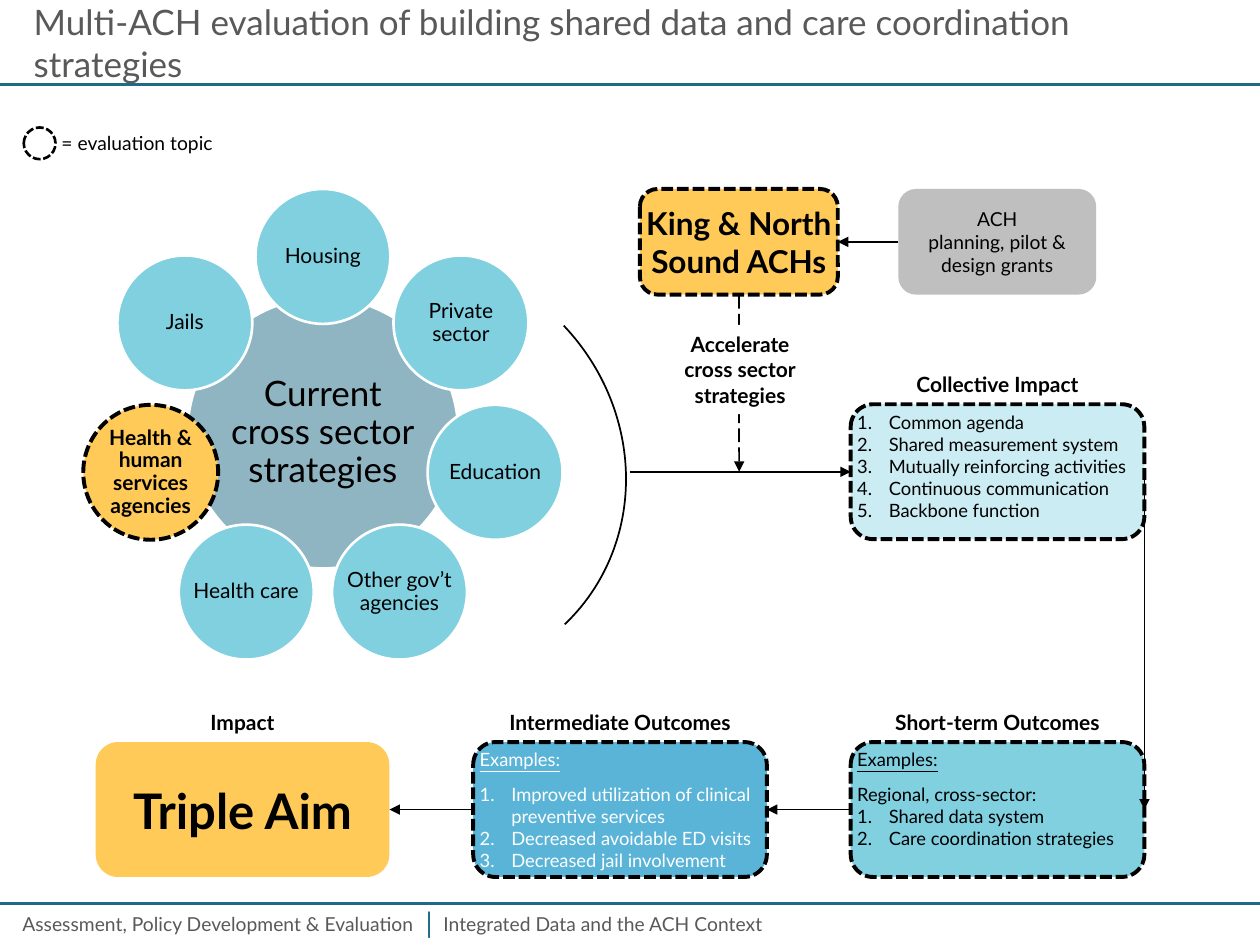
import math

import lxml.etree
import pptx
import pptx.dml.color
import pptx.enum.dml
import pptx.enum.shapes
import pptx.enum.text
import pptx.oxml.ns
import pptx.util

Cm, Pt = pptx.util.Cm, pptx.util.Pt
qn = pptx.oxml.ns.qn
SHAPE = pptx.enum.shapes.MSO_SHAPE
CONNECTOR = pptx.enum.shapes.MSO_CONNECTOR
DASH = pptx.enum.dml.MSO_LINE
ALIGN = pptx.enum.text.PP_ALIGN
ANCHOR = pptx.enum.text.MSO_ANCHOR

COLORS = {
    "black": "000000", "white": "FFFFFF", "grey text": "595959",
    "teal": "206A87", "aqua": "80D0E0", "pale aqua": "CCECF3",
    "blue": "59B4D8", "amber": "FFCA58", "grey": "BFBFBF",
}
TOP, LEFT, BOTTOM, RIGHT = range(4)
BOX_W, BOX_H = 5.92, 2.72
IMPACT_X, INTERMEDIATE_X, SHORT_TERM_X = (1.93 + 7.61 * i for i in range(3))
IMPACT_ROW, OUTCOME_ROW = 8.15, 14.96
FLOW_Y = IMPACT_ROW + BOX_H / 2


def rgb(name):
    return pptx.dml.color.RGBColor.from_string(COLORS[name])


def write(shape, lines, size, color="black", bold=False, align=ALIGN.CENTER,
          anchor=ANCHOR.MIDDLE, inset=0, spacing=None, wrap=True):
    frame = shape.text_frame
    frame.text = "\n".join(lines)
    frame.word_wrap = wrap
    frame.vertical_anchor = anchor
    frame.margin_left = frame.margin_right = Cm(inset)
    frame.margin_top = frame.margin_bottom = Cm(inset / 2)
    for paragraph in frame.paragraphs:
        paragraph.alignment = align
        if spacing:
            paragraph.line_spacing = spacing
        for run in paragraph.runs:
            run.font.name = "Lato"
            run.font.size = Pt(size)
            run.font.bold = bold
            run.font.color.rgb = rgb(color)


def add_label(slide, box, text, size, **style):
    label = slide.shapes.add_textbox(*map(Cm, box))
    write(label, [text], size, inset=0.25, **style)


def add_block(slide, kind, box, fill=None, line=None, width=1, dash=None):
    block = slide.shapes.add_shape(kind, *map(Cm, box))
    block.shadow.inherit = False
    if fill:
        block.fill.solid()
        block.fill.fore_color.rgb = rgb(fill)
    else:
        block.fill.background()
    if line:
        block.line.color.rgb = rgb(line)
        block.line.width = Pt(width)
        block.line.dash_style = dash
    else:
        block.line.fill.background()
    return block


def add_topic(slide, kind, box, fill, width=2.25):
    """Block with the dashed outline that marks an evaluation topic."""
    return add_block(slide, kind, box, fill, "black", width, DASH.SQUARE_DOT)


def add_line(slide, start, end, color="black", width=1.0, kind=CONNECTOR.STRAIGHT,
             dash=None, arrow=False, source=None, target=None):
    line = slide.shapes.add_connector(kind, *map(Cm, (*start, *end)))
    if source:
        line.begin_connect(*source)
    if target:
        line.end_connect(*target)
    line.line.color.rgb = rgb(color)
    line.line.width = Pt(width)
    line.line.dash_style = dash
    if arrow:
        outline = line.line._get_or_add_ln()
        lxml.etree.SubElement(outline, qn("a:tailEnd"), type="triangle")
    lxml.etree.SubElement(line._element.spPr, qn("a:effectLst"))
    return line


def add_arrow(slide, source, target, **style):
    return add_line(slide, (0, 0), (0, 0), arrow=True, source=source, target=target, **style)


def write_list(box, items, intro=(), color="black"):
    """Optional intro lines, the first underlined, then numbered items."""
    write(box, [*intro, *items], 10.5, color, align=ALIGN.LEFT, anchor=ANCHOR.TOP)
    paragraphs = box.text_frame.paragraphs
    if intro:
        paragraphs[0].runs[0].font.underline = True
        paragraphs[0].space_after = Pt(7.2)
    for paragraph in paragraphs[len(intro):]:
        properties = paragraph._p.get_or_add_pPr()
        properties.set("marL", str(Cm(0.64)))
        properties.set("indent", str(-Cm(0.64)))
        lxml.etree.SubElement(properties, qn("a:buFont"), typeface="+mj-lt")
        lxml.etree.SubElement(properties, qn("a:buAutoNum"), type="arabicPeriod")


def add_frame(slide):
    for y in (1.7, 18.21):
        add_line(slide, (0, y), (25.4, y), "teal", 1.5)
    add_label(slide, (0.43, 0.43, 24.56, 0.84),
              "Multi-ACH evaluation of building shared data and care coordination strategies",
              20, color="grey text", align=ALIGN.LEFT)
    footer = {"color": "grey text", "align": ALIGN.LEFT, "anchor": ANCHOR.TOP}
    add_label(slide, (0.2, 18.26, 9.09, 0.74),
              "Assessment, Policy Development & Evaluation", 11, **footer)
    add_label(slide, (8.69, 18.26, 12.9, 0.74), "Integrated Data and the ACH Context", 11, **footer)
    add_label(slide, (8.23, 18.14, 0.84, 0.94), "|", 16, color="teal", anchor=ANCHOR.TOP)


def add_legend(slide):
    meaning = add_block(slide, SHAPE.RECTANGLE, (1.24, 2.64, 3.18, 0.48), "white")
    write(meaning, ["= evaluation topic"], 11, align=ALIGN.LEFT)
    add_topic(slide, SHAPE.OVAL, (0.48, 2.57, 0.64, 0.64), "white", 1.5)


def add_sector_wheel(slide):
    center_x, center_y, ring = 6.51, 8.73, 3.56
    hub_size, sector_size = 5.46, 2.72

    def around(x, y, size):
        return x - size / 2, y - size / 2, size, size

    hub = add_block(slide, SHAPE.OVAL, around(center_x, center_y, hub_size), "teal", "white", 1.5)
    hub_color = hub._element.spPr.find(qn("a:solidFill"))[0]
    lxml.etree.SubElement(hub_color, qn("a:alpha"), val="50000")
    write(hub, ["Current\vcross sector\vstrategies"], 20, spacing=0.9, wrap=False)

    sectors = ["Housing", "Private\vsector", "Education", "Other gov’t\vagencies", "Health care",
               "Health &\vhuman\vservices\vagencies", "Jails"]
    for i, name in enumerate(sectors):
        angle = 2 * math.pi * i / len(sectors)
        box = around(center_x + ring * math.sin(angle), center_y - ring * math.cos(angle),
                     sector_size)
        is_topic = name.startswith("Health &")
        if is_topic:
            sector = add_topic(slide, SHAPE.OVAL, box, "amber")
        else:
            sector = add_block(slide, SHAPE.OVAL, box, "aqua", "white", 1.5)
        write(sector, [name], 12, bold=is_topic, spacing=0.9, wrap=False)

    # Arc closing the wheel on the right
    arc = add_block(slide, SHAPE.ARC, (3.99, 5.28, 8.76, 8.26), line="black")
    arc.rotation = 46.5


def add_flow(slide):
    rounded = SHAPE.ROUNDED_RECTANGLE

    # Headings above the boxes
    for text, x, row in [("Collective Impact", SHORT_TERM_X, IMPACT_ROW),
                         ("Short-term Outcomes", SHORT_TERM_X, OUTCOME_ROW),
                         ("Intermediate Outcomes", INTERMEDIATE_X, OUTCOME_ROW),
                         ("Impact", IMPACT_X, OUTCOME_ROW)]:
        add_label(slide, (x, row - 0.78, BOX_W, 0.76), text, 12, bold=True)

    # Boxes
    achs = add_topic(slide, rounded, (12.9, 3.81, 3.99, 2.13), "amber")
    write(achs, ["King & North Sound ACHs"], 18, bold=True)
    grants = add_block(slide, rounded, (18.11, 3.81, 3.99, 2.13), "grey")
    write(grants, ["ACH", "planning, pilot & design grants"], 11)
    collective = add_topic(slide, rounded, (SHORT_TERM_X, IMPACT_ROW, BOX_W, BOX_H), "pale aqua")
    write_list(collective, ["Common agenda", "Shared measurement system",
                            "Mutually reinforcing activities", "Continuous communication",
                            "Backbone function"])
    short_term = add_topic(slide, rounded, (SHORT_TERM_X, OUTCOME_ROW, BOX_W, BOX_H), "aqua")
    write_list(short_term, ["Shared data system", "Care coordination strategies"],
               ["Examples:", "Regional, cross-sector:"])
    intermediate = add_topic(slide, rounded, (INTERMEDIATE_X, OUTCOME_ROW, BOX_W, BOX_H), "blue")
    write_list(intermediate, ["Improved utilization of clinical preventive services",
                              "Decreased avoidable ED visits", "Decreased jail involvement"],
               ["Examples:"], "white")
    triple_aim = add_block(slide, rounded, (IMPACT_X, OUTCOME_ROW, BOX_W, BOX_H), "amber")
    write(triple_aim, ["Triple Aim"], 28, bold=True)

    # Arrows
    add_line(slide, (12.7, FLOW_Y), (SHORT_TERM_X, FLOW_Y), arrow=True, target=(collective, LEFT))
    add_line(slide, (14.9, 5.94), (14.9, FLOW_Y), dash=DASH.LONG_DASH, arrow=True,
             source=(achs, BOTTOM))
    add_arrow(slide, (grants, LEFT), (achs, RIGHT))
    add_arrow(slide, (short_term, LEFT), (intermediate, RIGHT))
    add_arrow(slide, (intermediate, LEFT), (triple_aim, RIGHT))
    turn = add_arrow(slide, (collective, RIGHT), (short_term, RIGHT), kind=CONNECTOR.ELBOW)
    turn._element.spPr.find(qn("a:xfrm")).set("flipH", "1")
    guides = turn._element.spPr.find(qn("a:prstGeom")).find(qn("a:avLst"))
    lxml.etree.SubElement(guides, qn("a:gd"), name="adj1", fmla="val -228600")

    # Caption over the dashed arrow
    accelerate = add_block(slide, SHAPE.RECTANGLE, (13.23, 6.55, 3.38, 1.8), "white")
    write(accelerate, ["Accelerate", "cross sector", "strategies"], 12, bold=True, inset=0.25)


def main():
    deck = pptx.Presentation()
    deck.slide_width, deck.slide_height = Cm(25.4), Cm(19.05)
    slide = deck.slides.add_slide(deck.slide_layouts[6])
    add_frame(slide)
    add_sector_wheel(slide)
    add_flow(slide)
    add_legend(slide)
    deck.save("out.pptx")


if __name__ == "__main__":
    main()
